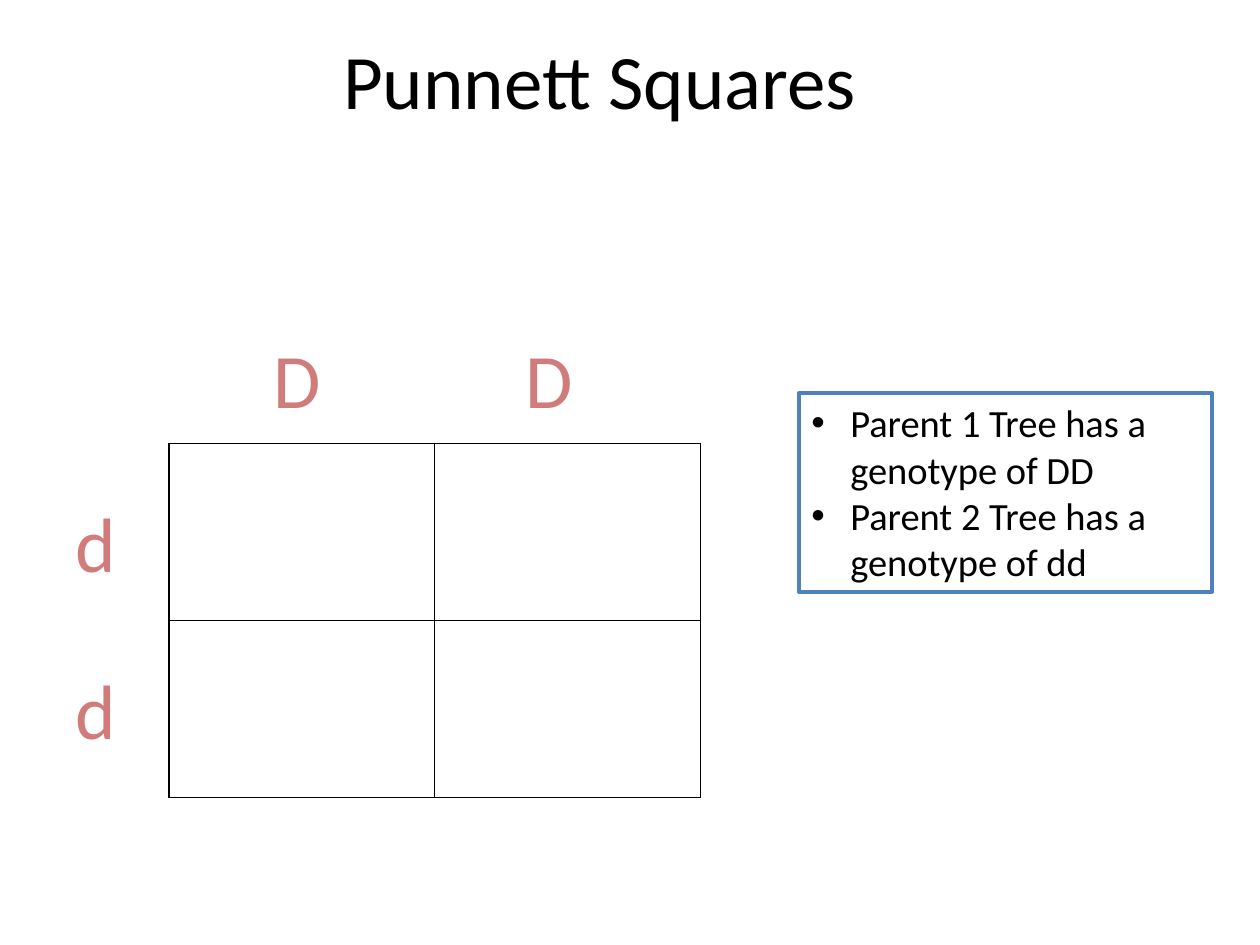
from dataclasses import dataclass

from lxml.etree import SubElement
from pptx import Presentation
from pptx.dml.color import RGBColor as Color
from pptx.enum.shapes import MSO_SHAPE as Shape
from pptx.enum.text import MSO_ANCHOR as Anchor, PP_ALIGN as Align
from pptx.oxml.ns import qn
from pptx.util import Inches, Pt


@dataclass(frozen=True)
class Theme:
    font: str = "Calibri"
    black: Color = Color(0, 0, 0)
    white: Color = Color(255, 255, 255)
    allele: Color = Color.from_string("D07C7A")
    outline: Color = Color.from_string("4F81BD")
    heading_size: int = 44
    note_size: int = 22
    grid_width: float = 1
    outline_width: float = 2
    bullet_indent: float = 0.31


def write_text(frame, lines, *, font, size, color, align=Align.LEFT,
               anchor=Anchor.TOP, bullet_indent=None):
    """Write one paragraph per line, with hanging bullets if indented."""
    frame.word_wrap = True
    frame.vertical_anchor = anchor
    for index, line in enumerate(lines):
        paragraph = frame.add_paragraph() if index else frame.paragraphs[0]
        paragraph.alignment = align
        run = paragraph.add_run()
        run.text = line
        run.font.name = font
        run.font.size = Pt(size)
        run.font.color.rgb = color
        if bullet_indent:
            properties = paragraph._p.get_or_add_pPr()
            properties.set("marL", str(Inches(bullet_indent)))
            properties.set("indent", str(-Inches(bullet_indent)))
            SubElement(properties, qn("a:buFont"), typeface="Arial")
            SubElement(properties, qn("a:buChar"), char="•")


class SlideBuilder:
    def __init__(self, slide, theme):
        self.slide = slide
        self.theme = theme

    def title(self, text, left, top, width, height):
        shape = self.slide.shapes.title
        shape.left, shape.top = Inches(left), Inches(top)
        shape.width, shape.height = Inches(width), Inches(height)
        write_text(shape.text_frame, [text], font=self.theme.font,
                   size=self.theme.heading_size, color=self.theme.black,
                   align=Align.CENTER, anchor=Anchor.MIDDLE)

    def grid(self, rows, columns, left, top, width, height):
        frame = self.slide.shapes.add_table(
            rows, columns, Inches(left), Inches(top), Inches(width), Inches(height))
        table = frame.table
        table.first_row = table.horz_banding = False
        for cell in table.iter_cells():
            self.cell_borders(cell)
            cell.fill.background()

    def cell_borders(self, cell):
        properties = cell._tc.get_or_add_tcPr()
        for side in ("a:lnL", "a:lnR", "a:lnT", "a:lnB"):
            line = SubElement(properties, qn(side), w=str(Pt(self.theme.grid_width)))
            fill = SubElement(line, qn("a:solidFill"))
            SubElement(fill, qn("a:srgbClr"), val=str(self.theme.black))

    def allele(self, letter, left, top):
        box = self.slide.shapes.add_textbox(
            Inches(left), Inches(top), Inches(0.71), Inches(0.84))
        write_text(box.text_frame, [letter], font=self.theme.font,
                   size=self.theme.heading_size, color=self.theme.allele)

    def note(self, lines, left, top, width, height):
        shape = self.slide.shapes.add_shape(
            Shape.RECTANGLE, Inches(left), Inches(top), Inches(width), Inches(height))
        shape.shadow.inherit = False
        shape.fill.solid()
        shape.fill.fore_color.rgb = self.theme.white
        shape.line.color.rgb = self.theme.outline
        shape.line.width = Pt(self.theme.outline_width)
        write_text(shape.text_frame, lines, font=self.theme.font,
                   size=self.theme.note_size, color=self.theme.black,
                   bullet_indent=self.theme.bullet_indent)


def main():
    presentation = Presentation()
    presentation.slide_width, presentation.slide_height = Inches(10), Inches(7.5)
    title_only = presentation.slide_layouts[5]
    builder = SlideBuilder(presentation.slides.add_slide(title_only), Theme())

    builder.title("Punnett Squares", 1.2, 0, 7.12, 1.25)

    # Empty square for the offspring
    builder.grid(2, 2, 1.34, 3.52, 4.22, 2.81)

    # Parent alleles: one parent across the top, the other down the side
    for index, letter in enumerate("DD"):
        builder.allele(letter, 2.07 + 2 * index, 2.58)
    for index, letter in enumerate("dd"):
        builder.allele(letter, 0.5, 3.88 + 1.33 * index)

    # Parent genotypes
    parents = enumerate(("DD", "dd"), start=1)
    builder.note([f"Parent {number} Tree has a genotype of {genotype}"
                  for number, genotype in parents], 6.34, 3.12, 3.28, 1.58)

    presentation.save("out.pptx")


if __name__ == "__main__":
    main()
